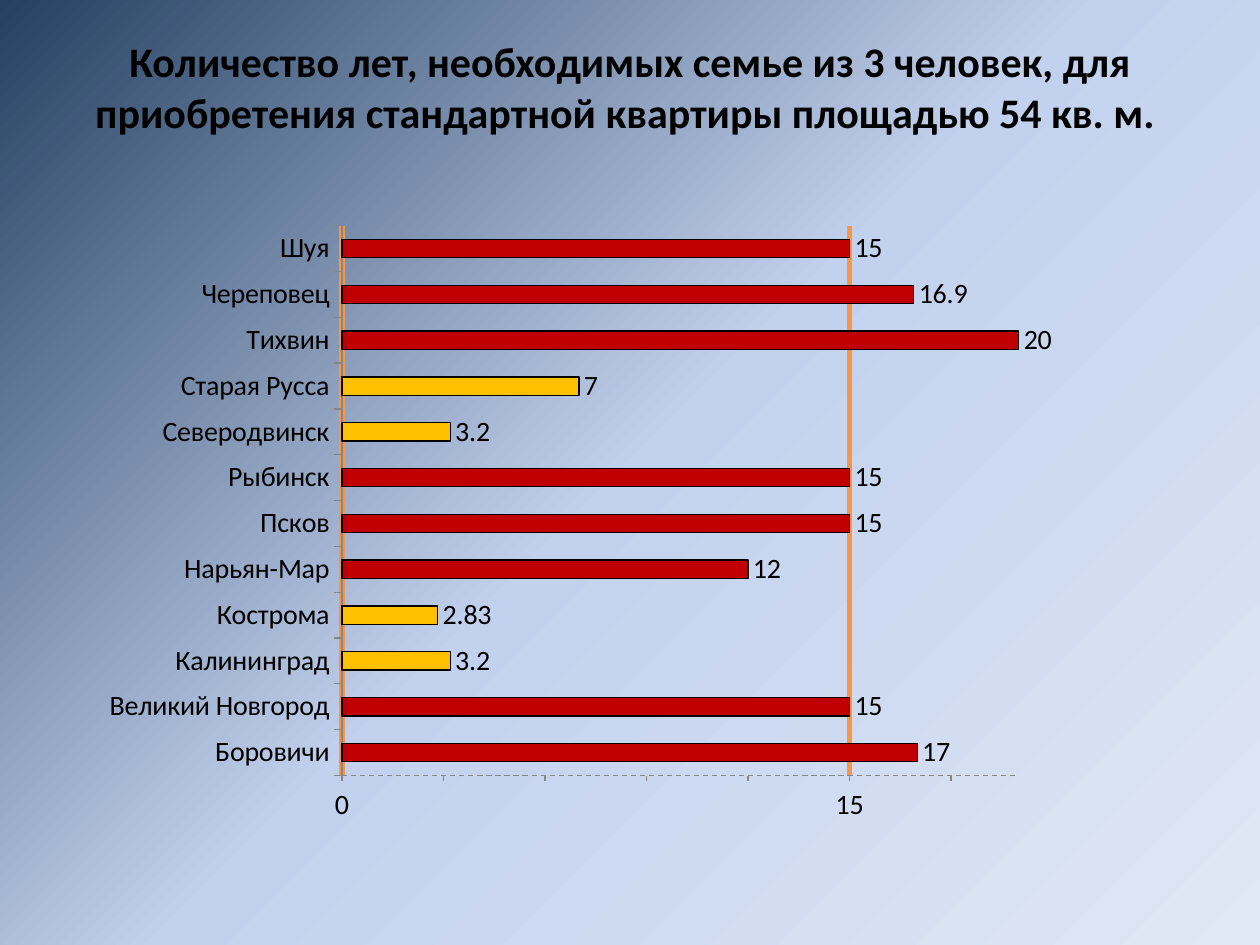
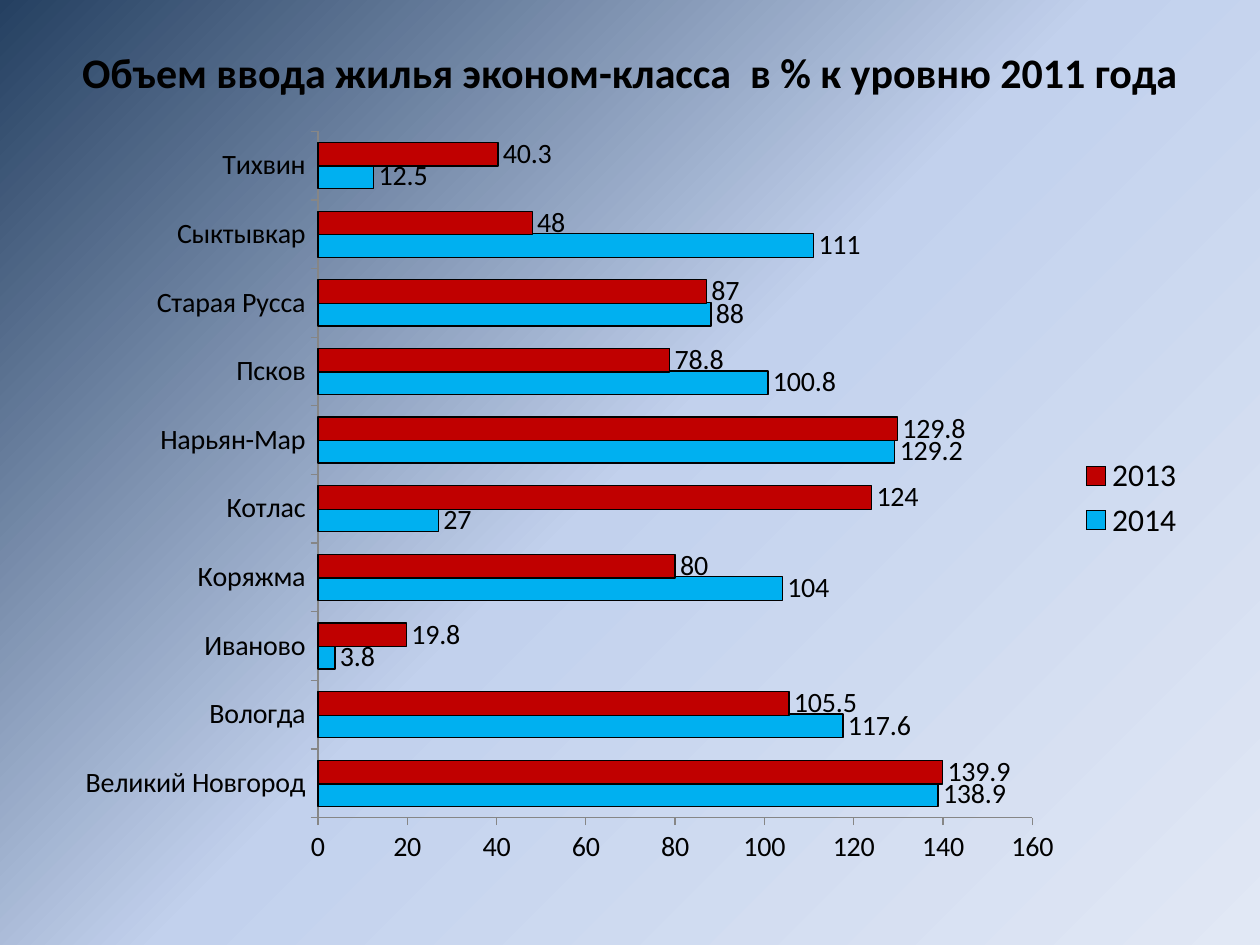
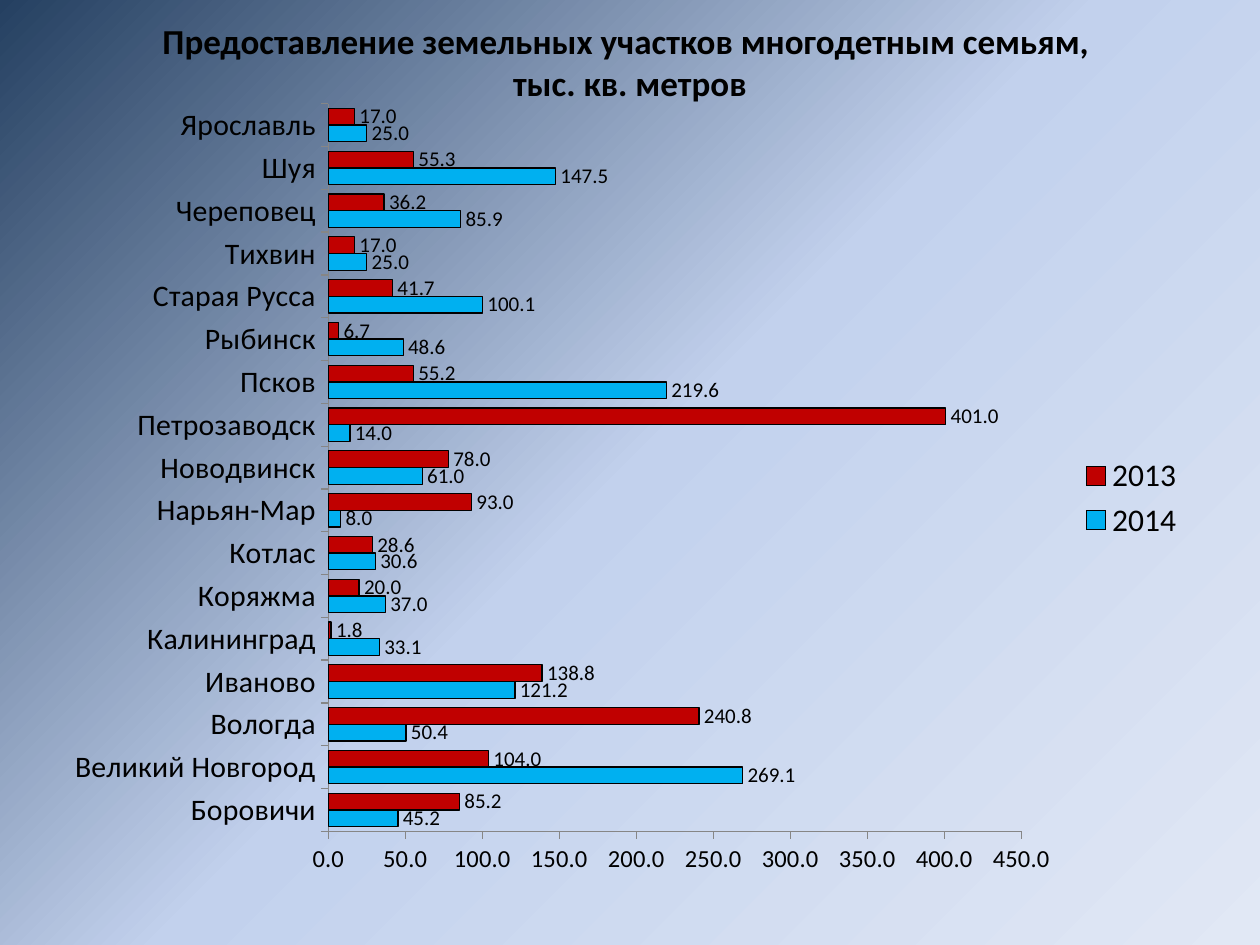
from copy import deepcopy

from lxml import etree
from pptx import Presentation
from pptx import util as u
from pptx.chart.data import CategoryChartData
from pptx.dml.color import RGBColor
from pptx.enum import chart as charts, dml, text
from pptx.oxml.ns import qn

FONT = "Calibri"
BLACK, GREY, ORANGE = "000000", "868686", "F79646"
RED, YELLOW, BLUE = "C00000", "FFC000", "00B0F0"
BACKGROUND = [(0, "254061"), (0.5, "C2D1ED"), (1, "E1E8F5")]
LEFT, WIDTH, TITLE_TOP = 1.27, 22.86, 0.76
TICK = charts.XL_TICK_MARK

YEARS_TO_BUY = {
    "Боровичи": 17, "Великий Новгород": 15, "Калининград": 3.2, "Кострома": 2.83,
    "Нарьян-Мар": 12, "Псков": 15, "Рыбинск": 15, "Северодвинск": 3.2,
    "Старая Русса": 7, "Тихвин": 20, "Череповец": 16.9, "Шуя": 15,
}
# Each town holds its values for 2014 and 2013.
HOUSING = {
    "Великий Новгород": (138.9, 139.9), "Вологда": (117.6, 105.5), "Иваново": (3.8, 19.8),
    "Коряжма": (104, 80), "Котлас": (27, 124), "Нарьян-Мар": (129.2, 129.8),
    "Псков": (100.8, 78.8), "Старая Русса": (88, 87), "Сыктывкар": (111, 48),
    "Тихвин": (12.5, 40.3),
}
LAND = {
    "Боровичи": (45.2, 85.2), "Великий Новгород": (269.1, 104), "Вологда": (50.4, 240.8),
    "Иваново": (121.2, 138.8), "Калининград": (33.1, 1.8), "Коряжма": (37, 20),
    "Котлас": (30.6, 28.6), "Нарьян-Мар": (8, 93), "Новодвинск": (61, 78),
    "Петрозаводск": (14, 401), "Псков": (219.6, 55.2), "Рыбинск": (48.6, 6.7),
    "Старая Русса": (100.1, 41.7), "Тихвин": (25, 17), "Череповец": (85.9, 36.2),
    "Шуя": (147.5, 55.3), "Ярославль": (25, 17),
}


def color(hex_string):
    return RGBColor.from_string(hex_string)


def set_line(line, hex_string, width):
    line.color.rgb = color(hex_string)
    line.width = u.Pt(width)


def set_fill(item, hex_string):
    """Fill a series or a point and give it the thin black outline."""
    item.format.fill.solid()
    item.format.fill.fore_color.rgb = color(hex_string)
    set_line(item.format.line, BLACK, 0.75)


def place_plot(chart, box):
    """Fix the inner plot area as fractions of the chart: left, top, width, height."""
    area = chart.element.find(".//" + qn("c:plotArea"))
    for old_layout in area.findall(qn("c:layout")):
        area.remove(old_layout)
    layout = etree.Element(qn("c:layout"))
    manual = etree.SubElement(layout, qn("c:manualLayout"))
    settings = [("layoutTarget", "inner"), ("xMode", "edge"), ("yMode", "edge")]
    for tag, value in settings + list(zip("xywh", box)):
        etree.SubElement(manual, qn(f"c:{tag}")).set("val", str(value))
    area.insert(0, layout)


class Deck:
    def __init__(self):
        self.presentation = Presentation()
        self.presentation.slide_width = u.Cm(25.4)
        self.presentation.slide_height = u.Cm(19.05)
        self.slide = None

    def add_slide(self):
        self.slide = self.presentation.slides.add_slide(self.presentation.slide_layouts[6])
        fill = self.slide.background.fill
        fill.gradient()
        fill.gradient_angle = 315
        stop_list = self.slide.element.find(".//" + qn("a:gsLst"))
        stop_list.append(deepcopy(stop_list[-1]))
        for stop, (position, hex_string) in zip(fill.gradient_stops, BACKGROUND):
            stop.position = position
            stop.color.rgb = color(hex_string)

    def add_title(self, lines, height, size=24):
        box = self.slide.shapes.add_textbox(
            u.Cm(LEFT), u.Cm(TITLE_TOP), u.Cm(WIDTH), u.Cm(height))
        frame = box.text_frame
        frame.word_wrap = True
        frame.vertical_anchor = text.MSO_ANCHOR.MIDDLE
        paragraph = frame.paragraphs[0]
        paragraph.alignment = text.PP_ALIGN.CENTER
        for number, line in enumerate(lines):
            if number:
                paragraph.add_line_break()
            run = paragraph.add_run()
            run.text = line
            run.font.name, run.font.size, run.font.bold = FONT, u.Pt(size), True
            run.font.color.rgb = color(BLACK)

    def add_bars(self, categories, series, top, height, gap, sizes,
                 number_format="General", overlap=0, plot_box=None):
        """Add a bar chart; series holds (name, values, colour), sizes holds
        the points of category, value axis and data label text."""
        data = CategoryChartData()
        data.categories = categories
        for name, values, _ in series:
            data.add_series(name, values)
        chart = self.slide.shapes.add_chart(
            charts.XL_CHART_TYPE.BAR_CLUSTERED, u.Cm(LEFT), u.Cm(top),
            u.Cm(WIDTH), u.Cm(height), data).chart
        chart.has_title = False
        chart.font.name, chart.font.size = FONT, u.Pt(18)
        chart.font.color.rgb = color(BLACK)
        chart.has_legend = len(series) > 1
        if chart.has_legend:
            chart.legend.position = charts.XL_LEGEND_POSITION.RIGHT
            chart.legend.include_in_layout = False

        category_size, value_size, label_size = sizes
        for axis, size in ((chart.category_axis, category_size), (chart.value_axis, value_size)):
            axis.has_major_gridlines = False
            axis.major_tick_mark = TICK.OUTSIDE
            axis.minor_tick_mark = TICK.NONE
            axis.tick_labels.font.size = u.Pt(size)
            set_line(axis.format.line, GREY, 0.75)
        value_labels = chart.value_axis.tick_labels
        value_labels.number_format = number_format
        value_labels.number_format_is_linked = False

        plot = chart.plots[0]
        plot.gap_width, plot.overlap = gap, overlap
        plot.vary_by_categories = False
        for bars, (_, _, hex_string) in zip(plot.series, series):
            set_fill(bars, hex_string)
            labels = bars.data_labels
            labels.show_value = True
            labels.position = charts.XL_LABEL_POSITION.OUTSIDE_END
            labels.number_format = number_format
            labels.number_format_is_linked = False
            labels.font.size = u.Pt(label_size)
        if plot_box:
            place_plot(chart, plot_box)
        return chart

    def add_year_bars(self, table, **options):
        """Compare 2014 with 2013 for every town of the table."""
        values_2014, values_2013 = zip(*table.values())
        series = [("2014", values_2014, BLUE), ("2013", values_2013, RED)]
        return self.add_bars(list(table), series, **options)


def add_affordability(deck):
    deck.add_slide()
    deck.add_title(["Количество лет, необходимых семье из 3 человек, для "
                    "приобретения стандартной квартиры площадью 54 кв. м. "], 1.96)
    values = list(YEARS_TO_BUY.values())
    chart = deck.add_bars(
        list(YEARS_TO_BUY), [("Series 1", values, RED)], top=3.12, height=13.89,
        gap=150, sizes=(16, 16, 16), plot_box=(0.246, 0.103, 0.597, 0.798))
    for number, value in enumerate(values):
        if value < 10:
            set_fill(chart.plots[0].series[0].points[number], YELLOW)
    axis = chart.value_axis
    axis.minimum_scale, axis.maximum_scale = 0, 20
    axis.major_unit, axis.minor_unit = 15, 3
    axis.major_tick_mark, axis.minor_tick_mark = TICK.NONE, TICK.OUTSIDE
    axis.tick_label_position = charts.XL_TICK_LABEL_POSITION.LOW
    axis.format.line.dash_style = dml.MSO_LINE.DASH
    axis.has_major_gridlines = True
    set_line(axis.major_gridlines.format.line, ORANGE, 3)


def add_housing(deck):
    deck.add_slide()
    deck.add_title(["Объем ввода жилья эконом-класса  в % к уровню 2011 года"], 1.37)
    deck.add_year_bars(HOUSING, top=2.34, height=15.39, gap=96, overlap=5, sizes=(16, 16, 16))


def add_land(deck):
    deck.add_slide()
    deck.add_title(["Предоставление земельных участков многодетным семьям, ",
                    "тыс. кв. метров"], 0.97, size=20)
    deck.add_year_bars(LAND, top=1.93, height=16.21, gap=56, sizes=(17, 14, 12),
                       number_format="0.0", plot_box=(0.234, 0.01, 0.611, 0.905))


def main():
    deck = Deck()
    add_affordability(deck)
    add_housing(deck)
    add_land(deck)
    deck.presentation.save("out.pptx")


if __name__ == "__main__":
    main()
